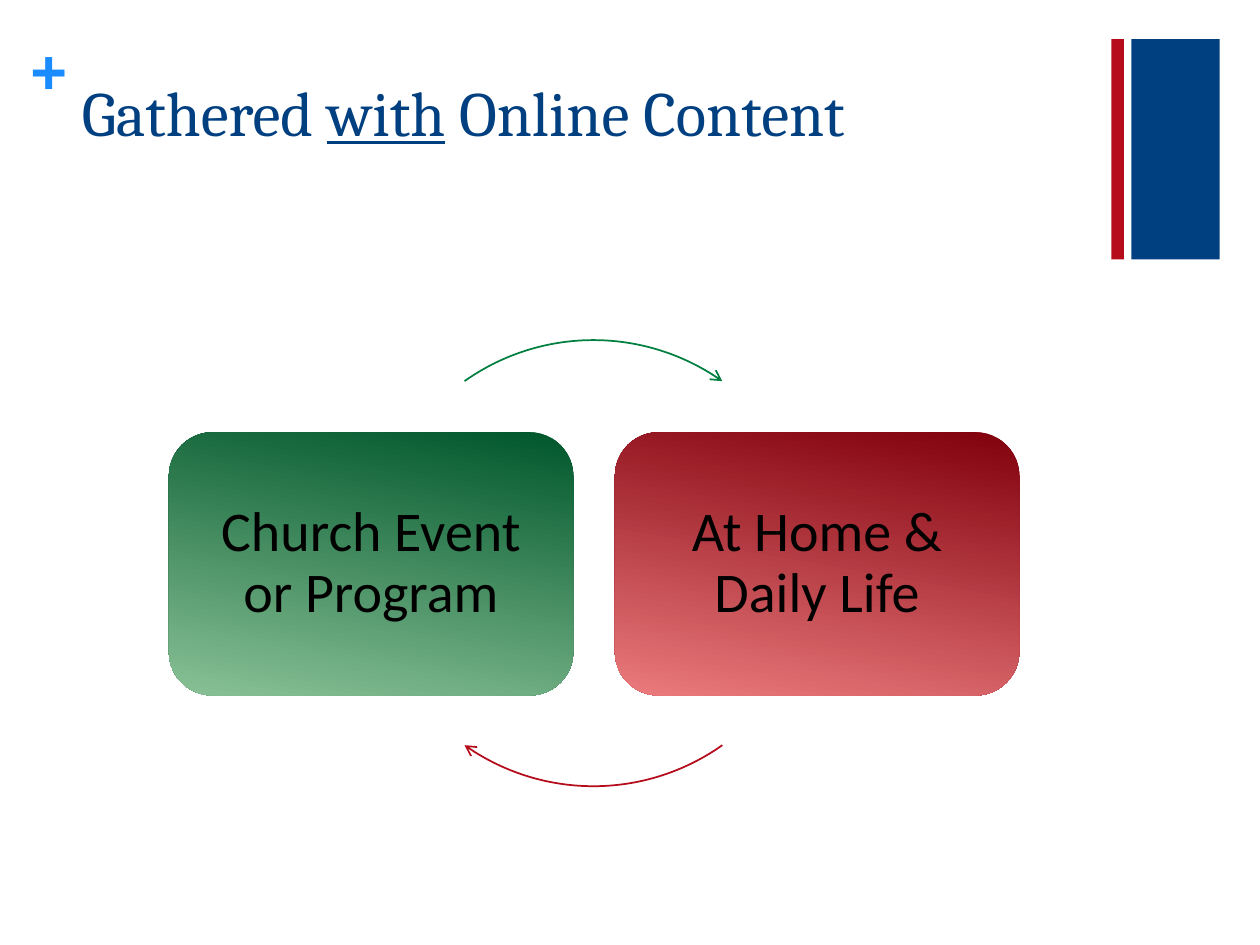
from lxml import etree
from pptx import Presentation
from pptx.dml.color import RGBColor
from pptx.enum.shapes import MSO_SHAPE
from pptx.enum.text import MSO_ANCHOR, PP_ALIGN
from pptx.oxml.ns import qn
from pptx.util import Inches, Pt

RECT, ROUNDED, ARC = MSO_SHAPE.RECTANGLE, MSO_SHAPE.ROUNDED_RECTANGLE, MSO_SHAPE.ARC
TOP, MIDDLE = MSO_ANCHOR.TOP, MSO_ANCHOR.MIDDLE
LEFT, CENTER = PP_ALIGN.LEFT, PP_ALIGN.CENTER


def color(hex_code):
    return RGBColor.from_string(hex_code)


def set_font(font, name, size, hex_code):
    font.name = name
    font.size = Pt(size)
    font.color.rgb = color(hex_code)


prs = Presentation()
prs.slide_width, prs.slide_height = Inches(10), Inches(7.5)
slide = prs.slides.add_slide(prs.slide_layouts[5])

# Corner bars
for left, width, fill in [(8.98, 0.7, "004080"), (8.82, 0.1, "B50B1B")]:
    bar = slide.shapes.add_shape(RECT, Inches(left), Inches(0.31), Inches(width), Inches(1.75))
    bar.shadow.inherit = False
    bar.fill.solid()
    bar.fill.fore_color.rgb = color(fill)
    bar.line.fill.background()

# Plus sign beside the title
plus = slide.shapes.add_textbox(Inches(0.24), Inches(0.25), Inches(0.29), Inches(0.61))
frame = plus.text_frame
frame.margin_left = frame.margin_right = frame.margin_top = frame.margin_bottom = 0
frame.text = "+"
set_font(frame.paragraphs[0].font, "Arial", 36, "1A8CFF")
frame.paragraphs[0].font.bold = True

# Title
title = slide.shapes.title
title.left, title.top = Inches(0.55), Inches(0.53)
title.width, title.height = Inches(8.26), Inches(1.22)
title.text_frame.vertical_anchor = TOP
heading = title.text_frame.paragraphs[0]
heading.alignment = LEFT
set_font(heading.font, "Cambria", 36, "004080")
for words, underlined in [("Gathered ", False), ("with", True), (" Online Content", False)]:
    run = heading.add_run()
    run.text = words
    run.font.underline = underlined

# The two settings of the cycle
settings = [
    ("Church Event or Program", 1.34, "00562B", "89C196"),
    ("At Home & Daily Life", 4.88, "81000C", "EB7B7D"),
]
for label, left, dark, light in settings:
    card = slide.shapes.add_shape(ROUNDED, Inches(left), Inches(3.43), Inches(3.21), Inches(2.09))
    card.shadow.inherit = False
    card.line.fill.background()
    card.fill.gradient()
    card.fill.gradient_angle = 260
    for stop, shade in zip(card.fill.gradient_stops, (dark, light)):
        stop.color.rgb = color(shade)
    frame = card.text_frame
    frame.word_wrap = True
    frame.vertical_anchor = MIDDLE
    frame.margin_left = frame.margin_right = Inches(0.13)
    frame.margin_top = frame.margin_bottom = Inches(0.13)
    frame.text = label
    caption = frame.paragraphs[0]
    caption.alignment = CENTER
    caption.line_spacing = 0.9
    set_font(caption.font, "Calibri", 32, "000000")

# Curved arrows: clockwise arcs of one circle, angles in degrees
for start, end, stroke in [(234.7, 305.3, "008040"), (54.7, 125.3, "B50B1B")]:
    arrow = slide.shapes.add_shape(ARC, Inches(2.94), Inches(2.7), Inches(3.54), Inches(3.54))
    # Adjustments count in 100000ths, angles in 60000ths of a degree
    arrow.adjustments[0] = (start if start <= 180 else start) * 0.6
    arrow.adjustments[1] = end * 0.6
    arrow.shadow.inherit = False
    arrow.fill.background()
    arrow.line.color.rgb = color(stroke)
    arrow.line.width = Pt(1)
    etree.SubElement(arrow.line._get_or_add_ln(), qn("a:tailEnd"), type="arrow")

prs.save("out.pptx")
